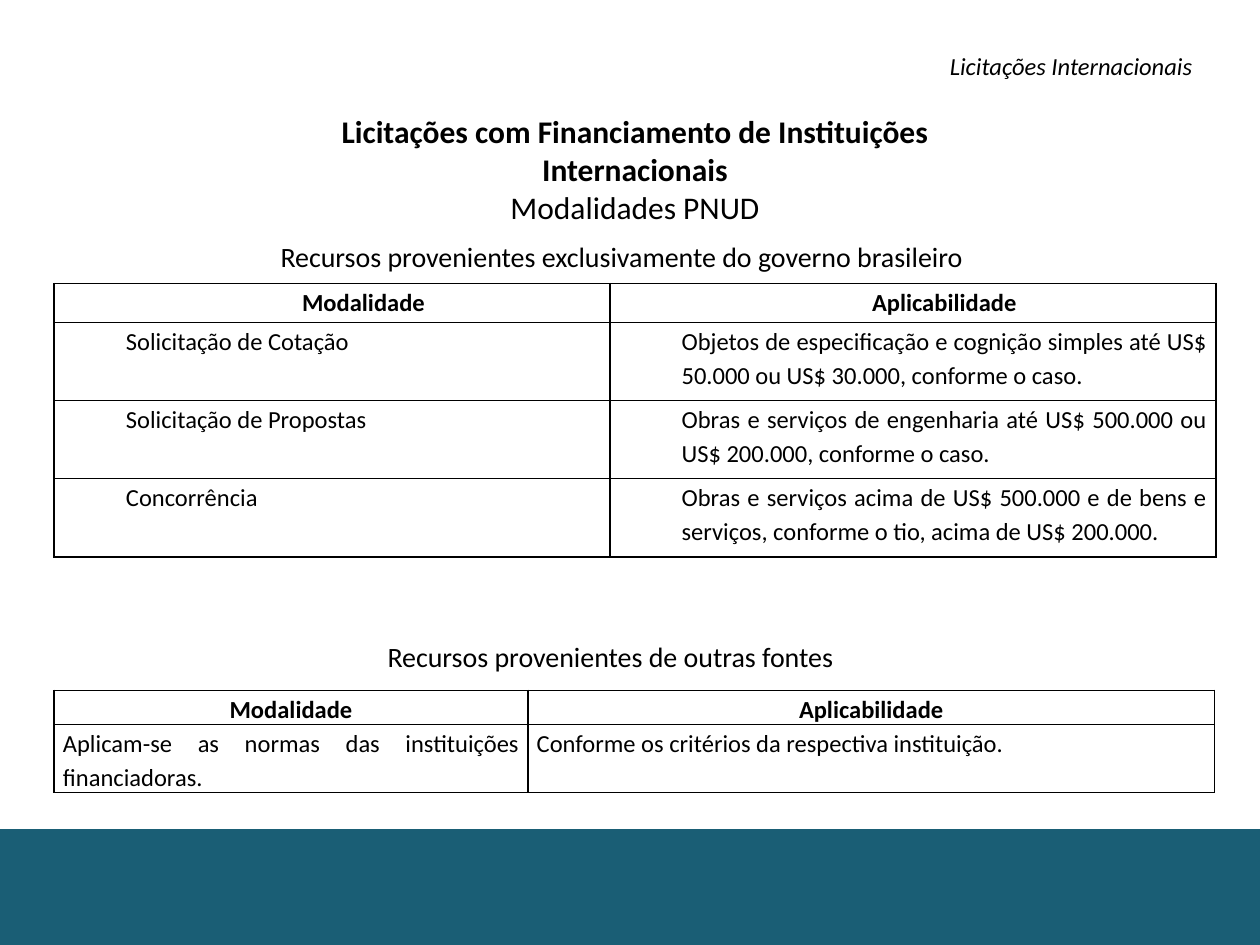
from dataclasses import dataclass

from lxml import etree
from pptx import Presentation
from pptx import util as u
from pptx.dml.color import RGBColor
from pptx.enum import shapes, text
from pptx.oxml.ns import qn

WIDTH, HEIGHT = u.Inches(10), u.Inches(7.5)
COLORS = {"ink": "000000", "band": "1A5E75"}
FONT = "Calibri"
ALIGN = text.PP_ALIGN


@dataclass
class Box:
    left: float
    top: float
    width: float
    height: float

    def place(self) -> tuple[int, int, int, int]:
        return tuple(u.Inches(value) for value in (self.left, self.top, self.width, self.height))


@dataclass
class Label:
    words: str
    box: Box
    size: int
    align: ALIGN = ALIGN.CENTER
    italic: bool = False


@dataclass
class Grid:
    left: float
    top: float
    columns: list[float]
    rows: list[float]
    indent: float
    cells: list[tuple[str, str]]


LABELS = [
    Label("Recursos provenientes exclusivamente do governo brasileiro", Box(0.17, 1.85, 9.53, 0.37), 16),
    Label("Recursos provenientes de outras fontes", Box(0.67, 5.03, 8.35, 0.37), 16),
    Label("Licitações Internacionais", Box(7.44, 0.36, 2.2, 0.34), 14, ALIGN.LEFT, True),
]
HEADER = ("Modalidade", "Aplicabilidade")
GRIDS = [
    Grid(0.43, 2.25, [4.41, 4.81], [0.31] + [0.62] * 3, 0.5, [
        HEADER,
        ("Solicitação de Cotação",
         "Objetos de especificação e cognição simples até US$ 50.000 ou US$ 30.000, conforme o caso."),
        ("Solicitação de Propostas",
         "Obras e serviços de engenharia até US$ 500.000 ou US$ 200.000, conforme o caso."),
        ("Concorrência",
         "Obras e serviços acima de US$ 500.000 e de bens e serviços, conforme o tio, acima de US$ 200.000."),
    ]),
    Grid(0.43, 5.48, [3.76, 5.45], [0.27, 0.54], 0, [
        HEADER,
        ("Aplicam-se as normas das instituições financiadoras.",
         "Conforme os critérios da respectiva instituição."),
    ]),
]


def color(name: str) -> RGBColor:
    return RGBColor.from_string(COLORS[name])


def add_run(paragraph, words: str, size: int, bold: bool = False, italic: bool = False) -> None:
    run = paragraph.add_run()
    run.text = words
    run.font.name, run.font.size = FONT, u.Pt(size)
    run.font.bold, run.font.italic = bold, italic
    run.font.color.rgb = color("ink")


def draw_band(slide) -> None:
    top = u.Inches(6.58)
    shape = slide.shapes.add_shape(shapes.MSO_SHAPE.RECTANGLE, 0, top, WIDTH, HEIGHT - top)
    shape.shadow.inherit = False
    shape.fill.solid()
    shape.fill.fore_color.rgb = color("band")
    shape.line.fill.background()


def draw_title(slide) -> None:
    title = slide.shapes.title
    title.left, title.top, title.width, title.height = Box(1.85, 0.84, 6.38, 1.01).place()
    frame = title.text_frame
    frame.word_wrap = True
    frame.auto_size = text.MSO_AUTO_SIZE.NONE
    frame.vertical_anchor = text.MSO_ANCHOR.TOP
    first, second = frame.paragraphs[0], frame.add_paragraph()
    first.alignment = second.alignment = ALIGN.CENTER
    add_run(first, "Licitações com Financiamento de Instituições Internacionais", 18, bold=True)
    add_run(second, "Modalidades PNUD", 18)


def draw_label(slide, label: Label) -> None:
    frame = slide.shapes.add_textbox(*label.box.place()).text_frame
    frame.word_wrap = True
    paragraph = frame.paragraphs[0]
    paragraph.alignment = label.align
    add_run(paragraph, label.words, label.size, italic=label.italic)


def add_borders(cell) -> None:
    properties = cell._tc.get_or_add_tcPr()
    for side in ("a:lnL", "a:lnR", "a:lnT", "a:lnB"):
        line = etree.SubElement(properties, qn(side), w=str(u.Pt(1)))
        fill = etree.SubElement(line, qn("a:solidFill"))
        etree.SubElement(fill, qn("a:srgbClr"), val=COLORS["ink"])


def fill_cell(cell, words: str, is_header: bool, indent: float) -> None:
    cell.margin_left = cell.margin_right = u.Inches(0.07)
    cell.margin_top = cell.margin_bottom = 0
    add_borders(cell)
    cell.fill.background()
    paragraph = cell.text_frame.paragraphs[0]
    paragraph.alignment = ALIGN.CENTER if is_header else ALIGN.JUSTIFY
    paragraph.line_spacing = 1.15
    properties = paragraph._p.get_or_add_pPr()
    properties.set("marL", str(u.Inches(indent)))
    properties.set("indent", "0")
    add_run(paragraph, words, 14, bold=is_header)


def draw_grid(slide, grid: Grid) -> None:
    box = Box(grid.left, grid.top, sum(grid.columns), sum(grid.rows))
    table = slide.shapes.add_table(len(grid.rows), len(grid.columns), *box.place()).table
    table.first_row = table.horz_banding = False
    for column, width in zip(table.columns, grid.columns):
        column.width = u.Inches(width)
    for row, height in zip(table.rows, grid.rows):
        row.height = u.Inches(height)
    for row_index, row_words in enumerate(grid.cells):
        for column_index, words in enumerate(row_words):
            fill_cell(table.cell(row_index, column_index), words, row_index == 0, grid.indent)


def main() -> None:
    presentation = Presentation()
    presentation.slide_width, presentation.slide_height = WIDTH, HEIGHT
    slide = presentation.slides.add_slide(presentation.slide_layouts.get_by_name("Title Only"))
    draw_band(slide)
    draw_title(slide)
    for label in LABELS:
        draw_label(slide, label)
    for grid in GRIDS:
        draw_grid(slide, grid)
    presentation.save("out.pptx")


if __name__ == "__main__":
    main()
